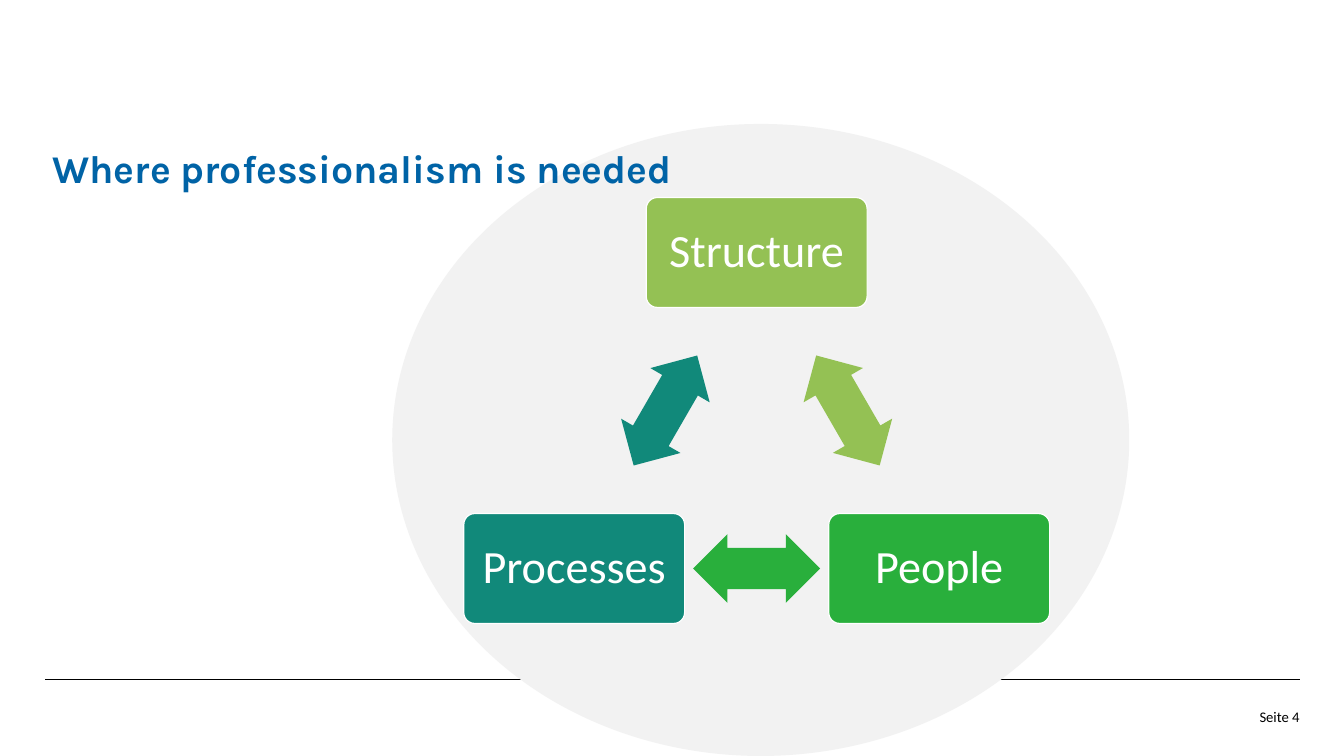
import math
from dataclasses import dataclass

from lxml import etree
from pptx import Presentation, util as u
from pptx.dml.color import RGBColor
from pptx.enum import shapes, text
from pptx.oxml.ns import qn


@dataclass(frozen=True)
class Theme:
    title: str = "0063A6"
    ink: str = "000000"
    white: str = "FFFFFF"
    backdrop: str = "F2F2F2"
    lime: str = "94C154"
    green: str = "29AF3C"
    teal: str = "11897A"
    title_font: str = "Karla"
    body_font: str = "Calibri"
    title_size: float = 28
    node_size: float = 33
    page_size: float = 10.5


theme = Theme()


def add_filled(kind, center_x, center_y, width, height, color):
    shape = slide.shapes.add_shape(
        kind, u.Inches(center_x - width / 2), u.Inches(center_y - height / 2),
        u.Inches(width), u.Inches(height))
    shape.shadow.inherit = False
    shape.fill.solid()
    shape.fill.fore_color.rgb = RGBColor.from_string(color)
    shape.line.fill.background()
    return shape


def set_text(shape, wording, align, anchor, inset, font_name, size, color):
    frame = shape.text_frame
    frame.word_wrap = True
    frame.auto_size = text.MSO_AUTO_SIZE.NONE
    frame.vertical_anchor = anchor
    frame.margin_left = frame.margin_right = u.Inches(inset)
    frame.margin_top = frame.margin_bottom = u.Inches(inset)
    frame.text = wording
    paragraph = frame.paragraphs[0]
    paragraph.alignment = align
    paragraph.font.name = font_name
    paragraph.font.size = u.Pt(size)
    paragraph.font.color.rgb = RGBColor.from_string(color)
    return paragraph


presentation = Presentation()
presentation.slide_width = u.Inches(13.33)
presentation.slide_height = u.Inches(7.5)
slide = presentation.slides.add_slide(presentation.slide_layouts[5])

# Footer rule and backdrop, both behind the title
left, right, rule_y = 0.45, 12.89, 6.74
rule = slide.shapes.add_connector(
    shapes.MSO_CONNECTOR.STRAIGHT, u.Inches(left), u.Inches(rule_y),
    u.Inches(right), u.Inches(rule_y))
rule.line.color.rgb = RGBColor.from_string(theme.ink)
rule.line.width = u.Pt(0.75)
etree.SubElement(rule._element.spPr, qn("a:effectLst"))
backdrop = add_filled(shapes.MSO_SHAPE.OVAL, 7.545, 4.365, 7.31, 6.27, theme.backdrop)

# Title
title = slide.shapes.title
for shape in (rule, backdrop):
    title._element.addprevious(shape._element)
title.left, title.top = u.Inches(0.52), u.Inches(1)
title.width, title.height = u.Inches(9.33), u.Inches(0.9)
paragraph = set_text(title, "Where professionalism is needed", text.PP_ALIGN.LEFT,
                     text.MSO_ANCHOR.BOTTOM, 0, theme.title_font,
                     theme.title_size, theme.title)
paragraph.font.bold = True
paragraph.line_spacing = 0.9

# Page number
page_width = 0.91
page = slide.shapes.add_textbox(u.Inches(right - page_width), u.Inches(7.02),
                                u.Inches(page_width), u.Inches(0.4))
set_text(page, "Seite 4", text.PP_ALIGN.RIGHT, text.MSO_ANCHOR.TOP, 0,
         theme.body_font, theme.page_size, theme.ink)

# Cycle: nodes on an equilateral triangle, clockwise from the top
nodes = [("Structure", theme.lime), ("People", theme.green), ("Processes", theme.teal)]
cycle_x, cycle_y, radius = 7.505, 4.595, 2.09
step = 360 / len(nodes)

for index, (label, color) in enumerate(nodes):
    angle = math.radians(index * step)
    node = add_filled(shapes.MSO_SHAPE.ROUNDED_RECTANGLE,
                      cycle_x + radius * math.sin(angle),
                      cycle_y - radius * math.cos(angle), 2.19, 1.09, color)
    node.adjustments[0] = 0.1
    node.line.color.rgb = RGBColor.from_string(theme.white)
    node.line.width = u.Pt(0.85)
    paragraph = set_text(node, label, text.PP_ALIGN.CENTER, text.MSO_ANCHOR.MIDDLE,
                         0.14, theme.body_font, theme.node_size, theme.white)
    paragraph.line_spacing = 0.9

    # Arrow halfway to the next node
    middle = math.radians((index + 0.5) * step)
    arrow = add_filled(shapes.MSO_SHAPE.LEFT_RIGHT_ARROW,
                       cycle_x + radius / 2 * math.sin(middle),
                       cycle_y - radius / 2 * math.cos(middle), 1.26, 0.68, color)
    arrow.adjustments[0], arrow.adjustments[1] = 0.6, 0.5
    arrow.rotation = (index + 0.5) * step

presentation.save("out.pptx")
